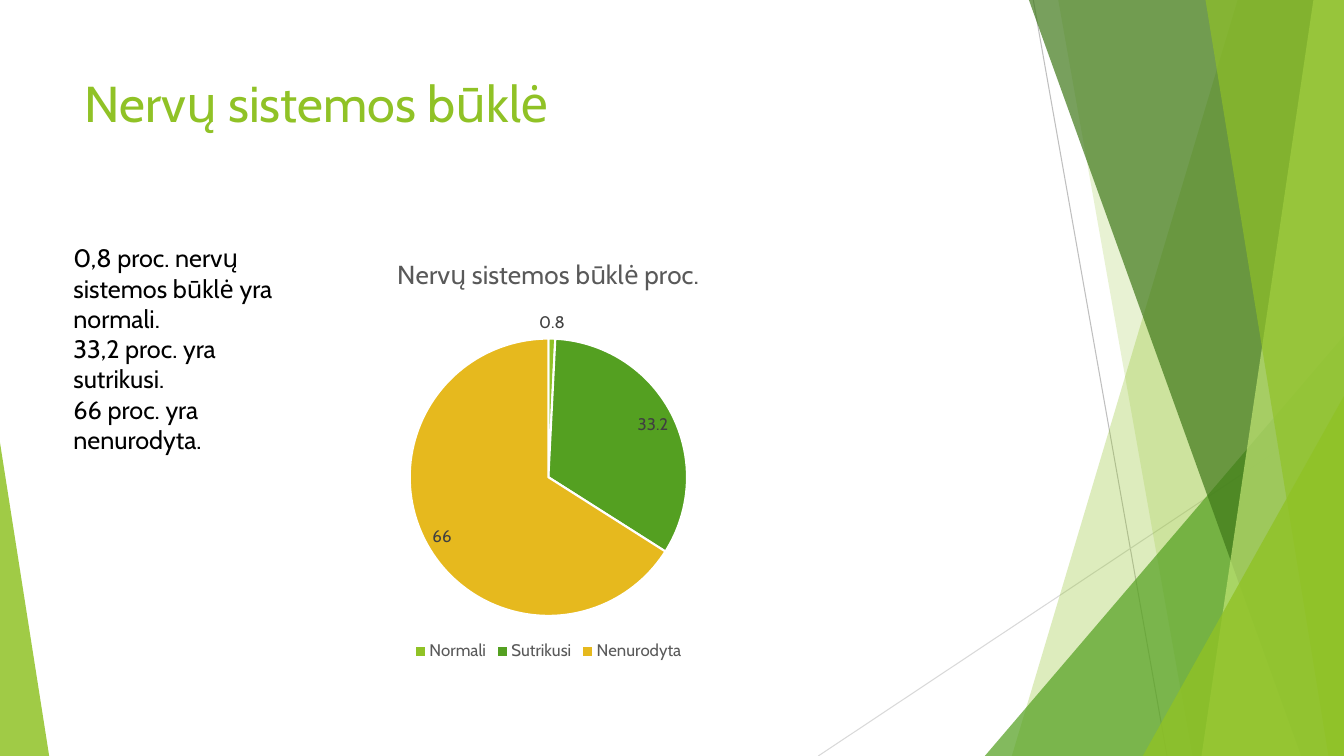
from lxml import etree
from pptx import Presentation
from pptx import util as u
from pptx.chart.data import CategoryChartData
from pptx.dml.color import RGBColor
from pptx.enum import chart as charts, shapes, text
from pptx.oxml.ns import qn

LIME = RGBColor(0x90, 0xC2, 0x26)
GREEN = RGBColor(0x54, 0xA0, 0x21)
DARK_GREEN = RGBColor(0x3F, 0x78, 0x19)
PALE_LIME = RGBColor(0xC0, 0xE4, 0x74)
GOLD = RGBColor(0xE6, 0xB9, 0x1E)
GREY = RGBColor(0xBF, 0xBF, 0xBF)
LIGHT_GREY = RGBColor(0xD9, 0xD9, 0xD9)
TEXT_GREY = RGBColor(0x59, 0x59, 0x59)
LABEL_GREY = RGBColor(0x40, 0x40, 0x40)
BLACK = RGBColor(0, 0, 0)
WHITE = RGBColor(0xFF, 0xFF, 0xFF)
FONT = "Cabin"
WIDTH, HEIGHT = 33.87, 19.05

deck = Presentation()
deck.slide_width, deck.slide_height = u.Cm(WIDTH), u.Cm(HEIGHT)
page = deck.slides.add_slide(deck.slide_layouts[6])


def set_font(font, size, color):
    font.name, font.size, font.color.rgb = FONT, u.Pt(size), color


def add_text(*paragraphs, left, top, width, height, size, color):
    box = page.shapes.add_textbox(u.Cm(left), u.Cm(top), u.Cm(width), u.Cm(height))
    frame = box.text_frame
    frame.word_wrap = True
    frame.vertical_anchor = text.MSO_ANCHOR.TOP
    for index, words in enumerate(paragraphs):
        para = frame.paragraphs[0] if index == 0 else frame.add_paragraph()
        span = para.add_run()
        span.text = words
        set_font(span.font, size, color)


# Thin crossing lines
for x1, y1, x2, y2, color in [
    (26.04, 0, 29.41, HEIGHT, GREY),
    (WIDTH, 10.24, 20.62, HEIGHT, LIGHT_GREY),
]:
    line = page.shapes.add_connector(
        shapes.MSO_CONNECTOR.STRAIGHT, u.Cm(x1), u.Cm(y1), u.Cm(x2), u.Cm(y2))
    line.line.color.rgb = color
    line.line.width = u.Pt(0.75)
    etree.SubElement(line._element.spPr, qn("a:effectLst"))

# Translucent facets: a band runs from its top x to its bottom x and on to the
# right edge; a triangle has left, top, width and the place of its tip
facets = [
    ("band", (31.19, 25.5), LIME, 30),
    ("band", (26.67, 30.05), LIME, 20),
    ("triangle", (24.82, 8.46, 9.05, 1), GREEN, 72),
    ("band", (25.93, 32.79), DARK_GREEN, 70),
    ("band", (33.1, 30.28), PALE_LIME, 70),
    ("band", (30.38, 33.48), LIME, 65),
    ("triangle", (28.8, 9.98, 5.07, 1), LIME, 80),
    ("triangle", (0, 11.15, 1.24, 0), LIME, 85),
]
for kind, place, color, opacity in facets:
    if kind == "band":
        top_x, bottom_x = place
        outline = page.shapes.build_freeform(u.Cm(top_x), 0)
        corners = [(WIDTH, 0), (WIDTH, HEIGHT), (bottom_x, HEIGHT)]
        outline.add_line_segments([(u.Cm(x), u.Cm(y)) for x, y in corners], close=True)
        facet = outline.convert_to_shape()
    else:
        left, top, width, tip = place
        facet = page.shapes.add_shape(
            shapes.MSO_SHAPE.ISOSCELES_TRIANGLE,
            u.Cm(left), u.Cm(top), u.Cm(width), u.Cm(HEIGHT - top))
        facet.adjustments[0] = tip
    facet.shadow.inherit = False
    facet.line.fill.background()
    facet.fill.solid()
    facet.fill.fore_color.rgb = color
    tint = facet._element.spPr.find(qn("a:solidFill"))[0]
    etree.SubElement(tint, qn("a:alpha"), val=str(opacity * 1000))

# Title
add_text("Nervų sistemos būklė", left=1.88, top=1.7, width=23.88, height=3.66,
         size=36, color=LIME)

# Pie chart
data = CategoryChartData()
data.categories = ["Normali", "Sutrikusi", "Nenurodyta"]
data.add_series("Series 1", [0.8, 33.2, 66])
chart = page.shapes.add_chart(
    charts.XL_CHART_TYPE.PIE, u.Cm(1.88), u.Cm(5.99), u.Cm(23.88), u.Cm(10.77), data).chart
set_font(chart.font, 10, BLACK)

chart.has_title = True
heading = chart.chart_title.text_frame
heading.text = "Nervų sistemos būklė proc."
set_font(heading.paragraphs[0].runs[0].font, 18.6, TEXT_GREY)
heading.paragraphs[0].runs[0].font.bold = False

chart.has_legend = True
chart.legend.position = charts.XL_LEGEND_POSITION.BOTTOM
chart.legend.include_in_layout = False
set_font(chart.legend.font, 12, TEXT_GREY)

plot = chart.plots[0]
plot.vary_by_categories = True
for index, color in enumerate([LIME, GREEN, GOLD]):
    wedge = plot.series[0].points[index].format
    wedge.fill.solid()
    wedge.fill.fore_color.rgb = color
    wedge.line.color.rgb = WHITE
    wedge.line.width = u.Pt(1.5)

labels = plot.series[0].data_labels
labels.show_value = True
labels.position = charts.XL_LABEL_POSITION.BEST_FIT
set_font(labels.font, 12, LABEL_GREY)

# Findings
add_text("0,8 proc. nervų sistemos būklė yra normali.",
         "33,2 proc. yra sutrikusi.",
         "66 proc. yra nenurodyta.",
         left=1.6, top=5.99, width=6.5, height=5.64, size=18, color=BLACK)

deck.save("out.pptx")
